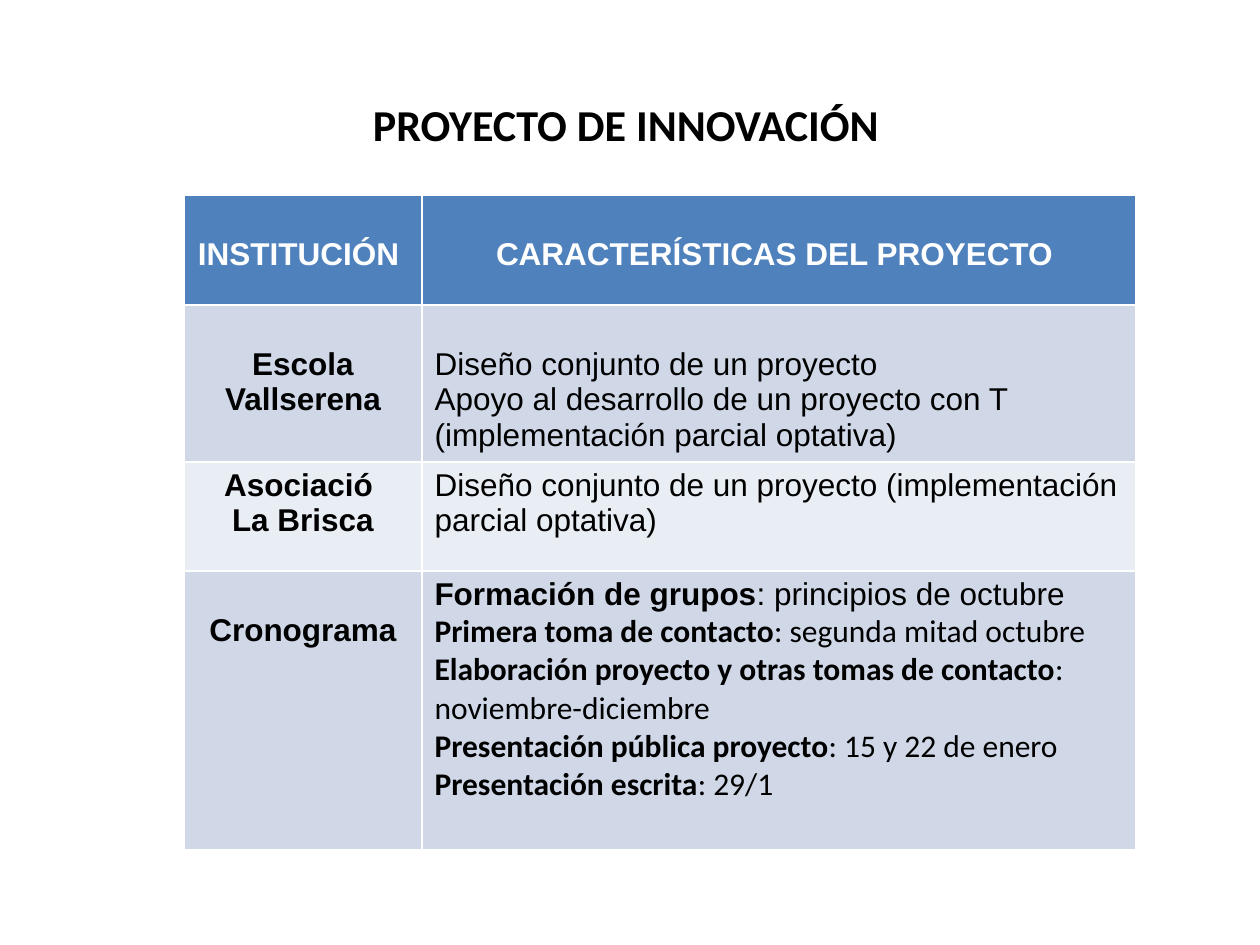
"""Build a slide with a titled table of innovation project institutions."""
from pptx import Presentation, util as u
from pptx.dml.color import RGBColor
from pptx.enum import text

PX = 914400 / 126


def px(n):
    return u.Emu(round(n * PX))


def add_run(p, txt, size=18, font="Arial", color="000000", bold=False):
    r = p.add_run()
    r.text = txt
    r.font.size, r.font.name, r.font.bold = u.Pt(size), font, bold
    r.font.color.rgb = RGBColor.from_string(color)


prs = Presentation()
prs.slide_width, prs.slide_height = px(1260), px(945)
s = prs.slides.add_slide(prs.slide_layouts[5])

title = s.shapes.title
title.left, title.top, title.width, title.height = px(59), px(39), px(1134), px(158)
tf = title.text_frame
tf.vertical_anchor = text.MSO_ANCHOR.MIDDLE
tf.margin_top = px(18)
p = tf.paragraphs[0]
p.alignment = text.PP_ALIGN.CENTER
add_run(p, "PROYECTO DE INNOVACIÓN", size=25.2, font="Calibri", bold=True)

schedule = [
    ("Formación de grupos", ": principios de octubre", "Arial"),
    ("Primera toma de contacto", ": segunda mitad octubre", "Calibri"),
    ("Elaboración proyecto y otras tomas de contacto", ": noviembre-diciembre", "Calibri"),
    ("Presentación pública proyecto", ": 15 y 22 de enero", "Calibri"),
    ("Presentación escrita", ": 29/1", "Calibri"),
]
DROP, TOP = 42, 6
rows = [
    (110, "4F81BD", (DROP, ["INSTITUCIÓN "]), (DROP, ["CARACTERÍSTICAS DEL PROYECTO "])),
    (157, "D0D8E8", (DROP, ["Escola Vallserena"]),
     (DROP, ["Diseño conjunto de un proyecto",
             "Apoyo al desarrollo de un proyecto con T (implementación parcial optativa)"])),
    (109, "E9EDF4", (TOP, ["Asociació ", "La Brisca"]),
     (TOP, ["Diseño conjunto de un proyecto (implementación parcial optativa)"])),
    (279, "D0D8E8", (DROP, ["Cronograma"]), (TOP, schedule)),
]

height = sum(row[0] for row in rows)
table = s.shapes.add_table(len(rows), 2, px(184), px(195), px(952), px(height)).table
for col, width in zip(table.columns, (238, 714)):
    col.width = px(width)

for i, (height, fill, *cells) in enumerate(rows):
    table.rows[i].height = px(height)
    for j, (margin, lines) in enumerate(cells):
        cell = table.cell(i, j)
        cell.fill.solid()
        cell.fill.fore_color.rgb = RGBColor.from_string(fill)
        cell.margin_top = px(margin)
        tf = cell.text_frame
        heading = i == 0 or j == 0
        for n, line in enumerate(lines):
            p = tf.add_paragraph() if n else tf.paragraphs[0]
            p.alignment = text.PP_ALIGN.CENTER if heading else text.PP_ALIGN.LEFT
            if isinstance(line, tuple):
                label, date, font = line
                add_run(p, label, font=font, bold=True)
                add_run(p, date, font=font)
            else:
                add_run(p, line, color="000000" if i else "FFFFFF", bold=heading)

prs.save("out.pptx")
